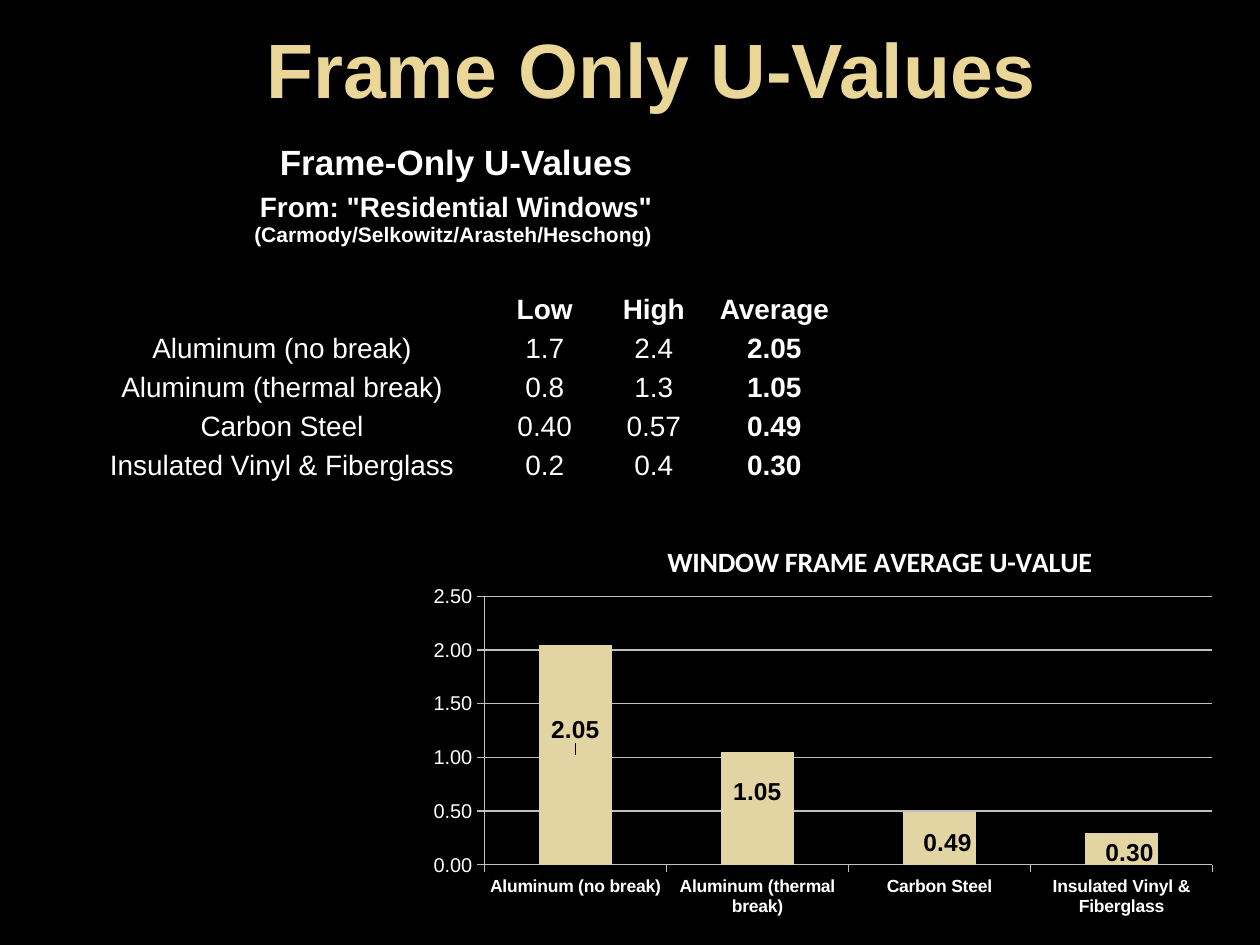
"""Build the slide on frame-only U-values with its table and column chart."""
from dataclasses import dataclass

from lxml import etree
from pptx import Presentation
from pptx.chart.data import CategoryChartData
from pptx.dml.color import RGBColor
from pptx.enum import chart as ch, text
from pptx.oxml import parse_xml
from pptx.oxml.ns import nsdecls, qn
from pptx.util import Cm, Pt


@dataclass(frozen=True)
class Theme:
    ground: str = "000000"
    ink: str = "FFFFFF"
    heading: str = "EAD696"
    bar: str = "E2D5A3"
    rule: str = "C0C0C0"
    font: str = "Arial"
    chart_font: str = "Calibri"
    title: float = 44
    table_title: float = 20
    body: float = 16
    citation: float = 12
    label: float = 14
    values: float = 11.4
    categories: float = 10


@dataclass(frozen=True)
class Frame:
    name: str
    low: str
    high: str
    average: str
    label_shift: tuple[float, float]


THEME = Theme()
FRAMES = [
    Frame("Aluminum (no break)", "1.7", "2.4", "2.05", (0, -0.06)),
    Frame("Aluminum (thermal break)", "0.8", "1.3", "1.05", (0, -0.04)),
    Frame("Carbon Steel", "0.40", "0.57", "0.49", (0.01, 0.01)),
    Frame("Insulated Vinyl & Fiberglass", "0.2", "0.4", "0.30", (0.01, 0.01)),
]
COLUMN_WIDTHS = [8.43, 2.16, 2.24, 2.62]
ROW_HEIGHTS = [0.94, 1.3, 1.57] + [0.79] * len(FRAMES)


def style(font, size: float, color: str, bold: bool = False, name: str = THEME.font) -> None:
    """Set the face, size, weight and colour of a font."""
    font.name, font.size, font.bold = name, Pt(size), bold
    font.color.rgb = RGBColor.from_string(color)


def format_cell(cell) -> None:
    """Clear the fill and margins of a cell and give it thin borders."""
    cell.fill.background()
    cell.vertical_anchor = text.MSO_ANCHOR.BOTTOM
    cell.margin_left = cell.margin_right = cell.margin_top = cell.margin_bottom = 0
    properties = cell._tc.get_or_add_tcPr()
    for index, side in enumerate("LRTB"):
        properties.insert(index, parse_xml(
            f'<a:ln{side} {nsdecls("a")} w="6350"><a:solidFill>'
            f'<a:srgbClr val="{THEME.ground}"/></a:solidFill></a:ln{side}>'))


def write_cell(cell, *parts: tuple[str, float, bool]) -> None:
    """Write centred runs, each given as wording, size and weight."""
    paragraph = cell.text_frame.paragraphs[0]
    paragraph.alignment = text.PP_ALIGN.CENTER
    for wording, size, bold in parts:
        run = paragraph.add_run()
        run.text = wording
        style(run.font, size, THEME.ink, bold)


def add_values_table(slide) -> None:
    """Add the table of low, high and average U-values."""
    table = slide.shapes.add_table(
        len(ROW_HEIGHTS), len(COLUMN_WIDTHS), Cm(1.47), Cm(2.74),
        Cm(sum(COLUMN_WIDTHS)), Cm(sum(ROW_HEIGHTS))).table
    table.first_row = table.horz_banding = False
    for column, width in zip(table.columns, COLUMN_WIDTHS):
        column.width = Cm(width)
    for row, height in zip(table.rows, ROW_HEIGHTS):
        row.height = Cm(height)
    for cell in table.iter_cells():
        format_cell(cell)
    last = len(COLUMN_WIDTHS) - 1
    for row in range(2):
        table.cell(row, 0).merge(table.cell(row, last))
    write_cell(table.cell(0, 0), ("Frame-Only U-Values", THEME.table_title, True))
    write_cell(table.cell(1, 0),
               ('From: "Residential Windows" ', THEME.body, True),
               ("(Carmody/Selkowitz/Arasteh/Heschong) ", THEME.citation, True))
    for column, heading in enumerate(["Low", "High", "Average"], start=1):
        write_cell(table.cell(2, column), (heading, THEME.body, True))
    for row, frame in enumerate(FRAMES, start=3):
        for column, entry in enumerate([frame.name, frame.low, frame.high, frame.average]):
            write_cell(table.cell(row, column), (entry, THEME.body, column == last))


def set_layout(parent, index: int, target: str = "", **settings) -> None:
    """Give a chart part a manual layout as fractions of the chart."""
    for former in parent.findall(qn("c:layout")):
        parent.remove(former)
    layout = etree.Element(qn("c:layout"))
    manual = etree.SubElement(layout, qn("c:manualLayout"))
    if target:
        etree.SubElement(manual, qn("c:layoutTarget"), val=target)
        for mode in ("xMode", "yMode"):
            etree.SubElement(manual, qn(f"c:{mode}"), val="edge")
    for key, setting in settings.items():
        etree.SubElement(manual, qn(f"c:{key}"), val=str(setting))
    parent.insert(index, layout)


def format_axis(axis, size: float, bold: bool) -> None:
    """Style the line, ticks and labels of an axis."""
    axis.major_tick_mark = ch.XL_TICK_MARK.OUTSIDE
    axis.format.line.color.rgb = RGBColor.from_string(THEME.rule)
    style(axis.tick_labels.font, size, THEME.ink, bold)


def add_average_chart(slide) -> None:
    """Add the column chart of average U-values."""
    averages = CategoryChartData(number_format="0.00")
    averages.categories = [frame.name for frame in FRAMES]
    averages.add_series("Series 1", [float(frame.average) for frame in FRAMES])
    chart = slide.shapes.add_chart(
        ch.XL_CHART_TYPE.COLUMN_CLUSTERED, Cm(8.46), Cm(10.16), Cm(16.31), Cm(8.46), averages).chart
    style(chart.font, THEME.categories, THEME.ground, name=THEME.chart_font)
    chart.has_legend = False
    chart.has_title = True
    caption = chart.chart_title.text_frame
    caption.text = "WINDOW FRAME AVERAGE U-VALUE"
    style(caption.paragraphs[0].runs[0].font, THEME.body, THEME.ink, True, THEME.chart_font)

    format_axis(chart.category_axis, THEME.categories, True)
    scale = chart.value_axis
    format_axis(scale, THEME.values, False)
    scale.minimum_scale, scale.maximum_scale, scale.major_unit = 0, 2.5, 0.5
    scale.tick_labels.number_format = "0.00"
    scale.tick_labels.number_format_is_linked = False
    scale.major_gridlines.format.line.color.rgb = RGBColor.from_string(THEME.rule)

    plot = chart.plots[0]
    plot.gap_width, plot.vary_by_categories = 150, False
    columns = plot.series[0]
    columns.format.fill.solid()
    columns.format.fill.fore_color.rgb = RGBColor.from_string(THEME.bar)
    labels = columns.data_labels
    labels.show_value = True
    labels.number_format, labels.number_format_is_linked = "0.00", False
    style(labels.font, THEME.label, THEME.ground, True)
    for index in range(len(FRAMES)):
        label = columns.points[index].data_label
        style(label.font, THEME.label, THEME.ground, True)
        label.position = ch.XL_LABEL_POSITION.CENTER

    root = chart._chartSpace
    for label, frame in zip(root.xpath(".//c:dLbl"), FRAMES):
        across, down = frame.label_shift
        set_layout(label, 1, x=across, y=down)
    title = root.xpath("./c:chart/c:title")[0]
    set_layout(title, 1, x=0.3, y=0.08)
    manual = title.find(f".//{qn('c:manualLayout')}")
    for index, mode in enumerate(("xMode", "yMode")):
        manual.insert(index, etree.Element(qn(f"c:{mode}"), val="edge"))
    title.find(qn("c:overlay")).set("val", "1")
    set_layout(root.xpath(".//c:plotArea")[0], 0, "inner", x=0.08, y=0.22, w=0.9, h=0.64)


def add_title(slide) -> None:
    """Place and style the slide title."""
    title = slide.shapes.title
    title.left, title.top, title.width, title.height = Cm(2.34), Cm(0), Cm(21.59), Cm(2.74)
    title.text_frame.text = "Frame Only U-Values"
    title.text_frame.vertical_anchor = text.MSO_ANCHOR.MIDDLE
    heading = title.text_frame.paragraphs[0]
    heading.alignment = text.PP_ALIGN.CENTER
    style(heading.runs[0].font, THEME.title, THEME.heading, True)


def main() -> None:
    """Build and save the presentation."""
    deck = Presentation()
    deck.slide_width, deck.slide_height = Cm(25.4), Cm(19.05)
    slide = deck.slides.add_slide(deck.slide_layouts[5])
    slide.background.fill.solid()
    slide.background.fill.fore_color.rgb = RGBColor.from_string(THEME.ground)
    add_title(slide)
    add_values_table(slide)
    add_average_chart(slide)
    deck.save("out.pptx")


if __name__ == "__main__":
    main()
